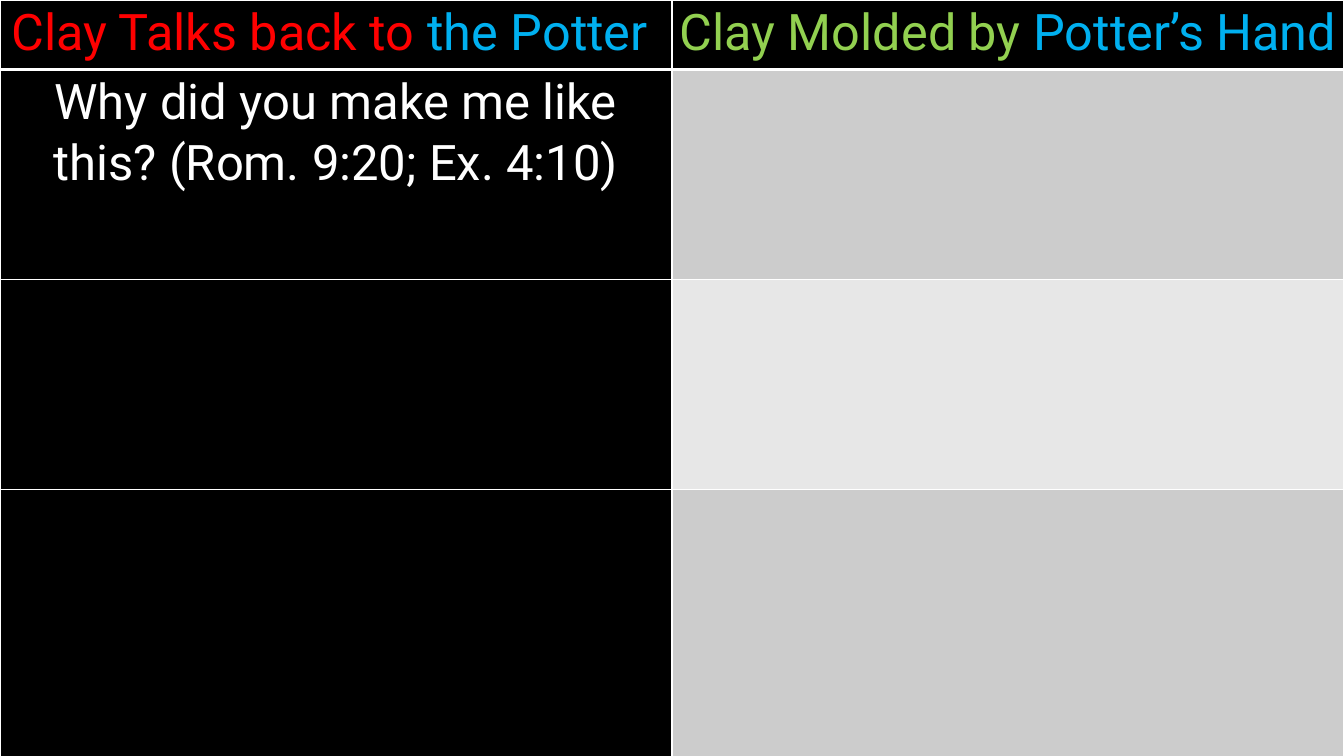
import dataclasses

import lxml.etree
import pptx
import pptx.dml.color
import pptx.enum.text
import pptx.oxml.ns
import pptx.util


@dataclasses.dataclass(frozen=True)
class Theme:
    font: str = "Roboto"
    heading_size: float = 36
    body_size: float = 35
    line_spacing: float = 1.07
    side_margin: float = 5
    border: float = 1
    heading_rule: float = 3
    black: str = "000000"
    white: str = "FFFFFF"
    red: str = "FF0000"
    blue: str = "00B0F0"
    green: str = "92D050"
    dark_band: str = "CCCCCC"
    light_band: str = "E7E7E7"


@dataclasses.dataclass(frozen=True)
class Phrase:
    text: str
    color: str


@dataclasses.dataclass(frozen=True)
class CellContent:
    fill: str
    phrases: tuple[Phrase, ...] = ()


@dataclasses.dataclass(frozen=True)
class TableRow:
    height: float
    text_size: float
    cells: tuple[CellContent, CellContent]


THEME = Theme()
SLIDE_WIDTH = 960
SLIDE_HEIGHT = 540

ROWS = (
    TableRow(49.7, THEME.heading_size, (
        CellContent(THEME.black, (
            Phrase("Clay Talks back to ", THEME.red),
            Phrase("the Potter ", THEME.blue),
        )),
        CellContent(THEME.black, (
            Phrase("Clay Molded by ", THEME.green),
            Phrase("Potter’s Hand", THEME.blue),
        )),
    )),
    TableRow(150, THEME.body_size, (
        CellContent(THEME.black, (
            Phrase("Why did you make me like this? (Rom. 9:20; Ex. 4:10)", THEME.white),
        )),
        CellContent(THEME.dark_band),
    )),
    TableRow(150, THEME.body_size, (
        CellContent(THEME.black),
        CellContent(THEME.light_band),
    )),
    TableRow(192.3, THEME.body_size, (
        CellContent(THEME.black),
        CellContent(THEME.dark_band),
    )),
)


def rgb(color: str) -> pptx.dml.color.RGBColor:
    return pptx.dml.color.RGBColor.from_string(color)


def set_borders(cell, top: float, bottom: float) -> None:
    properties = cell._tc.get_or_add_tcPr()
    widths = {"lnL": THEME.border, "lnR": THEME.border, "lnT": top, "lnB": bottom}
    for position, (side, width) in enumerate(widths.items()):
        line = lxml.etree.Element(
            pptx.oxml.ns.qn(f"a:{side}"), w=str(int(pptx.util.Pt(width)))
        )
        fill = lxml.etree.SubElement(line, pptx.oxml.ns.qn("a:solidFill"))
        lxml.etree.SubElement(fill, pptx.oxml.ns.qn("a:srgbClr"), val=THEME.white)
        properties.insert(position, line)


def write_cell(cell, content: CellContent, text_size: float) -> None:
    cell.fill.solid()
    cell.fill.fore_color.rgb = rgb(content.fill)
    cell.margin_left = cell.margin_right = pptx.util.Pt(THEME.side_margin)
    cell.margin_top = cell.margin_bottom = pptx.util.Pt(0)
    if not content.phrases:
        return
    paragraph = cell.text_frame.paragraphs[0]
    paragraph.alignment = pptx.enum.text.PP_ALIGN.CENTER
    paragraph.line_spacing = THEME.line_spacing
    paragraph.font.name = THEME.font
    paragraph.font.size = pptx.util.Pt(text_size)
    for phrase in content.phrases:
        run = paragraph.add_run()
        run.text = phrase.text
        run.font.color.rgb = rgb(phrase.color)


def add_comparison_table(slide, rows: tuple[TableRow, ...]) -> None:
    column_count = len(rows[0].cells)
    table = slide.shapes.add_table(
        len(rows), column_count, pptx.util.Pt(0), pptx.util.Pt(0),
        pptx.util.Pt(SLIDE_WIDTH), pptx.util.Pt(sum(row.height for row in rows)),
    ).table
    table.first_row = False
    table.horz_banding = False
    for column in table.columns:
        column.width = pptx.util.Pt(SLIDE_WIDTH / column_count)
    for row_index, row in enumerate(rows):
        table.rows[row_index].height = pptx.util.Pt(row.height)
        top = THEME.heading_rule if row_index == 1 else THEME.border
        bottom = THEME.heading_rule if row_index == 0 else THEME.border
        for column_index, content in enumerate(row.cells):
            cell = table.cell(row_index, column_index)
            write_cell(cell, content, row.text_size)
            set_borders(cell, top, bottom)


def main() -> None:
    presentation = pptx.Presentation()
    presentation.slide_width = pptx.util.Pt(SLIDE_WIDTH)
    presentation.slide_height = pptx.util.Pt(SLIDE_HEIGHT)
    slide = presentation.slides.add_slide(presentation.slide_layouts[6])
    slide.background.fill.solid()
    slide.background.fill.fore_color.rgb = rgb(THEME.black)
    add_comparison_table(slide, ROWS)
    presentation.save("out.pptx")


if __name__ == "__main__":
    main()
